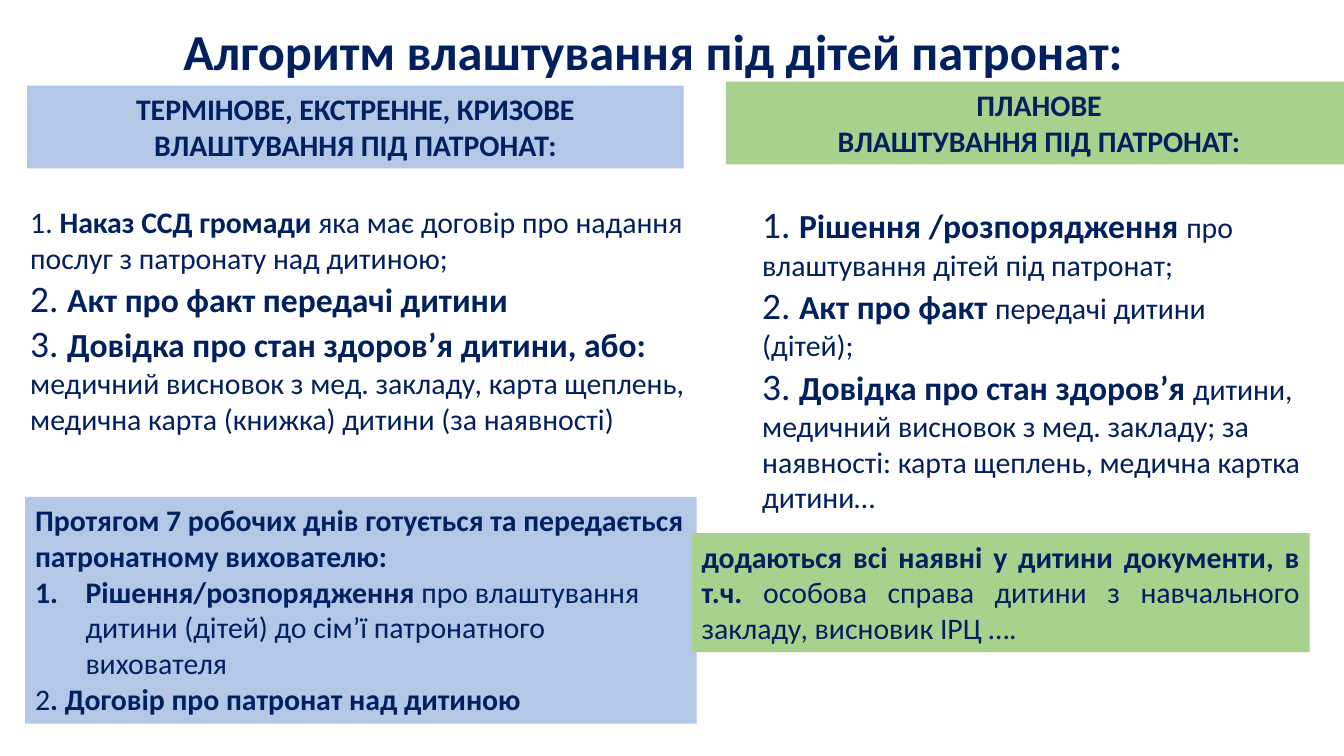
from dataclasses import dataclass

from lxml.etree import SubElement
from pptx import Presentation
from pptx.dml.color import RGBColor
from pptx.enum.shapes import MSO_SHAPE as Shape
from pptx.enum.text import MSO_ANCHOR as Anchor, MSO_AUTO_SIZE as AutoSize, PP_ALIGN as Align
from pptx.oxml.ns import qn
from pptx.text.text import TextFrame
from pptx.util import Inches, Pt

FONT = "Calibri"
NAVY, BLUE, GREEN = "002060", "B4C7E7", "A9D18E"
TEXT, LEAD, NUMBER, TITLE = 21.3, 24, 26.7, 36


@dataclass
class Span:
    text: str
    size: float = TEXT
    bold: bool = False


@dataclass
class Para:
    spans: list[Span]
    align: Align = Align.LEFT
    numbered: bool = False


@dataclass
class Area:
    left: float
    top: float
    width: float
    height: float


@dataclass
class Panel:
    area: Area
    fill: str
    paras: list[Para]


def colour(value: str) -> RGBColor:
    return RGBColor.from_string(value)


def write(frame: TextFrame, paras: list[Para]) -> None:
    frame.word_wrap = True
    frame.auto_size = AutoSize.NONE
    for index, item in enumerate(paras):
        para = frame.paragraphs[0] if index == 0 else frame.add_paragraph()
        para.alignment = item.align
        para.line_spacing = 1.0
        para.space_before = Pt(0)
        indent = Inches(0.5) if item.numbered else 0
        props = para._p.get_or_add_pPr()
        props.set("marL", str(indent))
        props.set("indent", str(-indent))
        if item.numbered:
            SubElement(props, qn("a:buAutoNum"), type="arabicPeriod")
        else:
            SubElement(props, qn("a:buNone"))
        for part in item.spans:
            span = para.add_run()
            span.text = part.text
            span.font.name = FONT
            span.font.size = Pt(part.size)
            span.font.bold = part.bold
            span.font.color.rgb = colour(NAVY)


def place(holder, area: Area, paras: list[Para], anchor: Anchor) -> None:
    holder.left, holder.top = Inches(area.left), Inches(area.top)
    holder.width, holder.height = Inches(area.width), Inches(area.height)
    holder.text_frame.vertical_anchor = anchor
    write(holder.text_frame, paras)


def draw_panel(page, panel: Panel) -> None:
    area = panel.area
    box = page.shapes.add_shape(Shape.RECTANGLE, Inches(area.left), Inches(area.top),
                                Inches(area.width), Inches(area.height))
    box.shadow.inherit = False
    box.fill.solid()
    box.fill.fore_color.rgb = colour(panel.fill)
    box.line.fill.background()
    box.text_frame.vertical_anchor = Anchor.TOP
    write(box.text_frame, panel.paras)


def step(number: int, lead: str, rest: str = "") -> Para:
    spans = [Span(f"{number}. ", NUMBER), Span(lead, LEAD, True)]
    return Para(spans + [Span(rest)] if rest else spans)


HEADING = [Para([Span("Алгоритм влаштування під дітей патронат:", TITLE, True)], Align.CENTER)]

URGENT_STEPS = [
    Para([Span("1. "), Span("Наказ ССД громади ", bold=True),
          Span("яка має договір про надання послуг з патронату над дитиною;")]),
    step(2, "Акт про факт передачі дитини"),
    step(3, "Довідка про стан здоров’я дитини, або: ",
         "медичний висновок з мед. закладу, карта щеплень, "
         "медична карта (книжка) дитини (за наявності)"),
]

PLANNED_STEPS = [
    step(1, "Рішення /розпорядження ", "про влаштування дітей під патронат;"),
    step(2, "Акт про факт ", "передачі дитини (дітей);"),
    step(3, "Довідка про стан здоров’я ",
         "дитини, медичний висновок з мед. закладу; за наявності: "
         "карта щеплень, медична картка дитини…"),
]

PANELS = [
    Panel(Area(7.2, 0.81, 6.21, 0.82), GREEN, [
        Para([Span("ПЛАНОВЕ", bold=True)], Align.CENTER),
        Para([Span("ВЛАШТУВАННЯ ПІД ПАТРОНАТ:", bold=True)], Align.CENTER),
    ]),
    Panel(Area(0.27, 0.85, 6.51, 0.82), BLUE, [
        Para([Span("ТЕРМІНОВЕ, ЕКСТРЕННЕ, КРИЗОВЕ ВЛАШТУВАННЯ ПІД ПАТРОНАТ:", bold=True)],
             Align.CENTER),
    ]),
    Panel(Area(0.25, 4.93, 6.66, 2.25), BLUE, [
        Para([Span("Протягом 7 робочих днів готується та передається "
                   "патронатному вихователю:", bold=True)]),
        Para([Span("Рішення/розпорядження ", bold=True),
              Span("про влаштування дитини (дітей) до сім’ї патронатного вихователя")],
             numbered=True),
        Para([Span("2"), Span(". Договір про патронат над дитиною", bold=True)]),
    ]),
    Panel(Area(6.86, 5.29, 6.13, 1.18), GREEN, [
        Para([Span("додаються всі наявні у дитини документи, в т.ч. ", bold=True),
              Span("особова справа дитини з навчального закладу, висновик ІРЦ ….")],
             Align.JUSTIFY),
    ]),
]


def main() -> None:
    deck = Presentation()
    deck.slide_width, deck.slide_height = Inches(13.33), Inches(7.5)
    page = deck.slides.add_slide(deck.slide_layouts.get_by_name("Two Content"))

    # Title and the two lists of steps
    title, urgent, planned = page.placeholders
    place(title, Area(0.75, 0.08, 11.46, 0.84), HEADING, Anchor.MIDDLE)
    place(urgent, Area(0.2, 1.97, 7, 2.43), URGENT_STEPS, Anchor.TOP)
    place(planned, Area(7.46, 1.95, 5.56, 3.24), PLANNED_STEPS, Anchor.TOP)

    # Coloured headers and notes
    for panel in PANELS:
        draw_panel(page, panel)

    deck.save("out.pptx")


if __name__ == "__main__":
    main()
